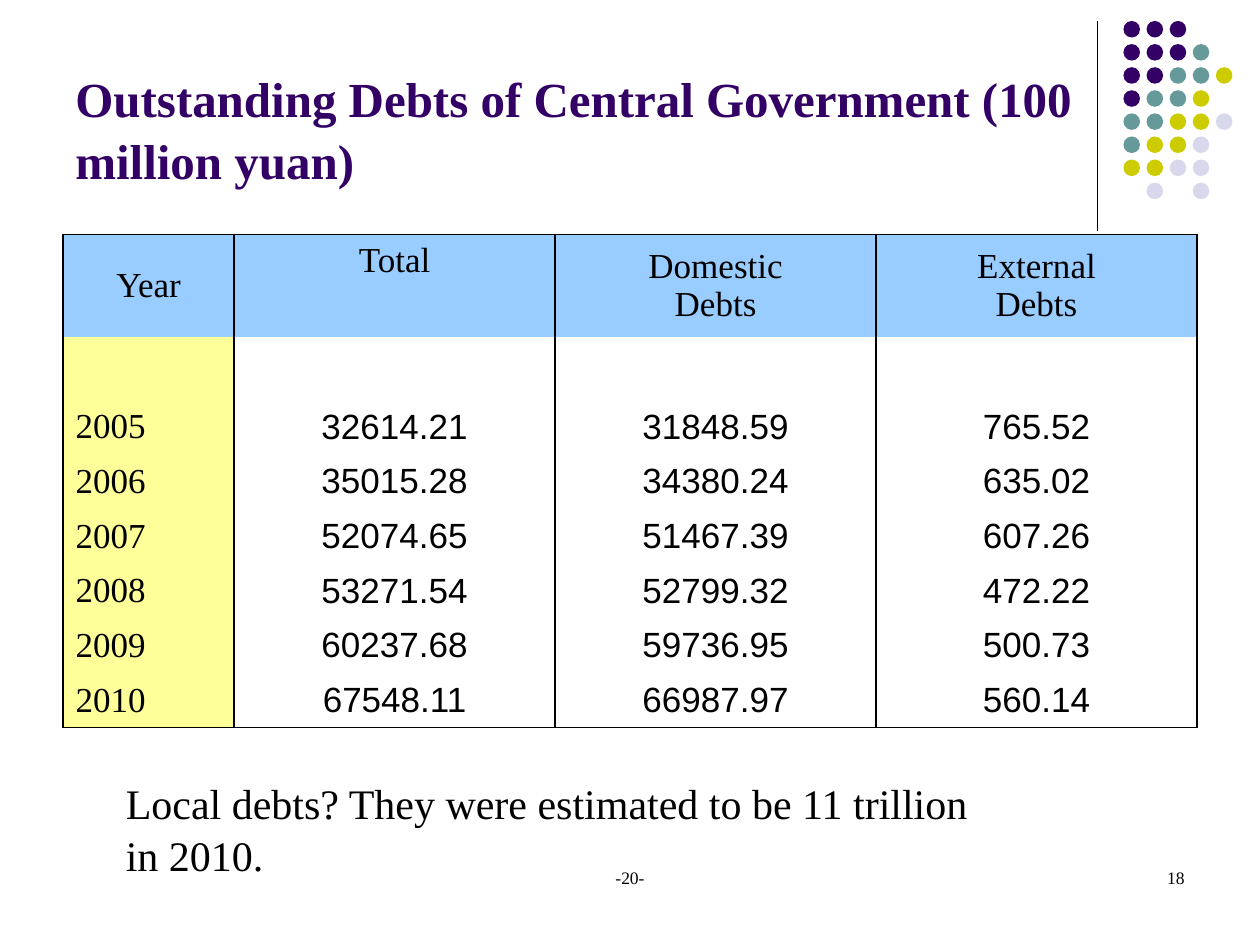
from lxml.etree import SubElement
from pptx import Presentation
from pptx.dml.color import RGBColor
from pptx.enum.shapes import MSO_CONNECTOR as Connector, MSO_SHAPE as Shape
from pptx.enum.text import MSO_ANCHOR as Anchor, PP_ALIGN as Align
from pptx.oxml.ns import qn
from pptx.util import Inches, Pt

BLACK = RGBColor(0x00, 0x00, 0x00)
PURPLE = RGBColor(0x33, 0x00, 0x66)
TEAL = RGBColor(0x66, 0x99, 0x99)
OLIVE = RGBColor(0xCC, 0xCC, 0x00)
LAVENDER = RGBColor(0xD8, 0xD8, 0xEC)
HEADER_BLUE = RGBColor(0x99, 0xCC, 0xFF)
YEAR_YELLOW = RGBColor(0xFF, 0xFF, 0x99)
SERIF = "Times New Roman"
SANS = "Arial"

presentation = Presentation()
presentation.slide_width = Inches(10)
presentation.slide_height = Inches(7.5)
slide = presentation.slides.add_slide(presentation.slide_layouts[6])
shapes = slide.shapes


def grid(*steps):
    return [round(step * presentation.slide_width / 120) for step in steps]


def write(frame, text, size=20, font=SERIF, color=BLACK, bold=False,
          align=Align.LEFT, anchor=Anchor.TOP, spacing=None):
    frame.word_wrap = True
    frame.vertical_anchor = anchor
    for index, line in enumerate(text.split("\n")):
        paragraph = frame.add_paragraph() if index else frame.paragraphs[0]
        paragraph.alignment = align
        paragraph.line_spacing = spacing
        run = paragraph.add_run()
        run.text = line
        run.font.name = font
        run.font.size = Pt(size)
        run.font.bold = bold
        run.font.color.rgb = color


divider = shapes.add_connector(Connector.STRAIGHT, *grid(104.5, 2, 104.5, 22))
divider.line.color.rgb = BLACK
divider.line.width = Pt(0.75)
SubElement(divider._element.spPr, qn("a:effectLst"))

DOT_COLORS = {"P": PURPLE, "T": TEAL, "O": OLIVE, "L": LAVENDER}
DOT_ROWS = ["PPP", "PPPT", "PPTTO", "PTTO", "TTOOL", "TOOL", "OOLL", ".L.L"]
for row, pattern in enumerate(DOT_ROWS):
    for column, code in enumerate(pattern):
        if code in DOT_COLORS:
            dot = shapes.add_shape(
                Shape.OVAL, *grid(107 + 2.2 * column, 2 + 2.2 * row, 1.58, 1.58))
            dot.shadow.inherit = False
            dot.fill.solid()
            dot.fill.fore_color.rgb = DOT_COLORS[code]
            dot.line.fill.background()

TEXTS = [
    ("Outstanding Debts of Central Government (100 million yuan)", (6, 1.6, 99, 17),
     dict(size=28, color=PURPLE, bold=True, anchor=Anchor.BOTTOM, spacing=1.05)),
    ("Local debts? They were estimated to be 11 trillion in 2010.",
     (10.8, 73.3, 86, 10.9), dict(size=24, spacing=1.03)),
    ("-20-", (41, 82, 38, 6), dict(size=10, align=Align.CENTER)),
    ("18", (86, 82, 28, 6), dict(size=10, align=Align.RIGHT)),
]
for text, place, style in TEXTS:
    write(shapes.add_textbox(*grid(*place)).text_frame, text, **style)

ROWS = [
    ("Year", "Total", "Domestic\nDebts", "External\nDebts"),
    ("", "", "", ""),
    ("2005", "32614.21", "31848.59", "765.52"),
    ("2006", "35015.28", "34380.24", "635.02"),
    ("2007", "52074.65", "51467.39", "607.26"),
    ("2008", "53271.54", "52799.32", "472.22"),
    ("2009", "60237.68", "59736.95", "500.73"),
    ("2010", "67548.11", "66987.97", "560.14"),
]
COLUMN_WIDTHS = grid(16.3, 30.57, 30.57, 30.57)
ROW_HEIGHTS = grid(9.7, 6, *[5.11] * 6)
left, top = grid(6, 22.35)
table = shapes.add_table(len(ROWS), len(COLUMN_WIDTHS), left, top,
                         sum(COLUMN_WIDTHS), sum(ROW_HEIGHTS)).table
table.first_row = False
table.horz_banding = False
for column, width in zip(table.columns, COLUMN_WIDTHS):
    column.width = width
for row, height in zip(table.rows, ROW_HEIGHTS):
    row.height = height

for row, values in enumerate(ROWS):
    for column, value in enumerate(values):
        cell = table.cell(row, column)
        properties = cell._tc.get_or_add_tcPr()
        edges = {"L": True, "R": True, "T": row == 0, "B": row == len(ROWS) - 1}
        for side, visible in edges.items():
            border = SubElement(properties, qn(f"a:ln{side}"), w=str(Pt(1)))
            if visible:
                fill = SubElement(border, qn("a:solidFill"))
                SubElement(fill, qn("a:srgbClr"), val=str(BLACK))
            else:
                SubElement(border, qn("a:noFill"))
        if row == 0 or column == 0:
            cell.fill.solid()
            cell.fill.fore_color.rgb = YEAR_YELLOW if row else HEADER_BLUE
        else:
            cell.fill.background()
        if value:
            write(cell.text_frame, value, font=SANS if row and column else SERIF,
                  align=Align.LEFT if row and not column else Align.CENTER)
        cell.vertical_anchor = Anchor.TOP if value == "Total" else Anchor.MIDDLE

presentation.save("out.pptx")
